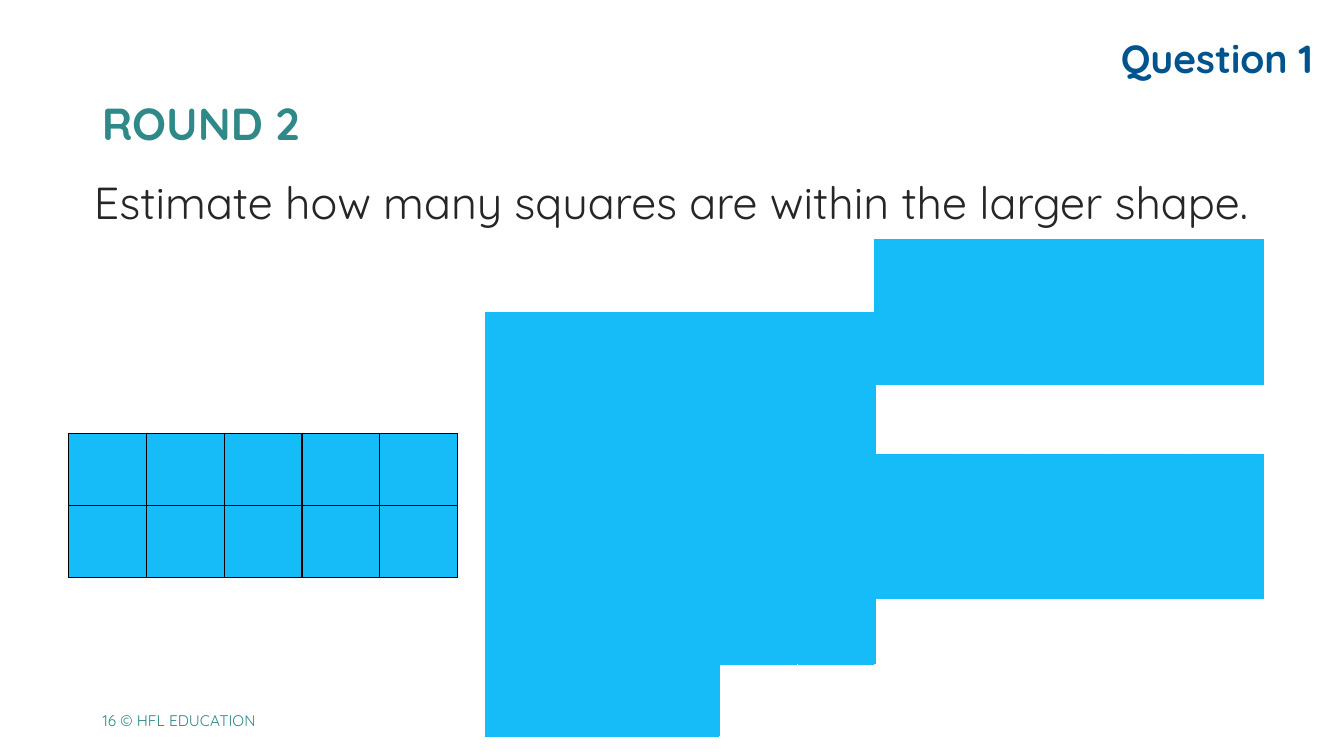
"""Build the Round 2 estimation slide with its ten-square blocks."""
from dataclasses import dataclass

from lxml import etree
from pptx import Presentation
from pptx import util as u
from pptx.dml.color import RGBColor
from pptx.enum import text
from pptx.oxml import ns

FONT = "Quicksand"
COLOURS = {
    "teal": "2F8989",
    "navy": "00548E",
    "ink": "262626",
    "sky": "15BCF8",
    "black": "000000",
    "white": "FFFFFF",
}
ROWS, COLUMNS = 2, 5
BLOCK_WIDTH, BLOCK_HEIGHT = 3.86, 1.43
ALL_SIDES = "LRTB"


@dataclass(frozen=True)
class Label:
    """Wording, place and look of one text."""

    wording: str
    left: float
    top: float
    width: float
    height: float
    size: int
    colour: str
    bold: bool = False
    align: text.PP_ALIGN = text.PP_ALIGN.LEFT
    anchor: text.MSO_ANCHOR = text.MSO_ANCHOR.MIDDLE
    wrap: bool = True


@dataclass(frozen=True)
class Block:
    """A block of ten squares, some of which may be blank."""

    left: float
    top: float
    line: str = "sky"
    blanks: tuple[tuple[int, int, str], ...] = ()


TITLE = Label("ROUND 2", 0.91, 0.59, 9.84, 1.26, 32, "teal", bold=True)
TASK = Label(
    "Estimate how many squares are within the larger shape.",
    0.52, 1.68, 12.28, 4.13, 32, "ink",
    align=text.PP_ALIGN.CENTER, anchor=text.MSO_ANCHOR.TOP,
)
FOOTER = Label("16 © HFL EDUCATION", 0.92, 6.95, 2.75, 0.4, 11, "teal")
QUESTION = Label(
    "Question 1", 10.93, 0.29, 2.19, 0.57, 28, "navy", bold=True,
    align=text.PP_ALIGN.RIGHT, anchor=text.MSO_ANCHOR.TOP, wrap=False,
)
BLOCKS = [
    Block(4.82, 4.51),
    Block(0.68, 4.3, "black"),
    Block(4.82, 3.1),
    Block(8.67, 2.38),
    Block(8.67, 4.51),
    Block(4.82, 5.88, blanks=((1, 3, "LT"), (1, 4, "T"))),
]


def rgb(name: str) -> RGBColor:
    """Return the named colour."""
    return RGBColor.from_string(COLOURS[name])


def fill_label(box, label: Label) -> None:
    """Place a text shape and format its single paragraph."""
    box.left, box.top = u.Inches(label.left), u.Inches(label.top)
    box.width, box.height = u.Inches(label.width), u.Inches(label.height)
    frame = box.text_frame
    frame.text = label.wording
    frame.auto_size = text.MSO_AUTO_SIZE.NONE
    frame.word_wrap = label.wrap
    frame.vertical_anchor = label.anchor
    para = frame.paragraphs[0]
    para.alignment = label.align
    para.space_before = u.Pt(0)
    span = para.runs[0]
    span.font.name = FONT
    span.font.size = u.Pt(label.size)
    span.font.bold = label.bold
    span.font.color.rgb = rgb(label.colour)


def remove_bullet(para) -> None:
    """Clear the bullet and indent of a body paragraph."""
    properties = para._p.get_or_add_pPr()
    properties.set("marL", "0")
    properties.set("indent", "0")
    etree.SubElement(properties, ns.qn("a:buNone"))


def add_borders(cell, sides: str, colour: str) -> None:
    """Draw one-point borders on the given sides of a cell."""
    properties = cell._tc.get_or_add_tcPr()
    for side in sides:
        line = etree.SubElement(properties, ns.qn(f"a:ln{side}"), w=str(u.Pt(1)))
        solid = etree.SubElement(line, ns.qn("a:solidFill"))
        etree.SubElement(solid, ns.qn("a:srgbClr"), val=COLOURS[colour])


def add_block(page, block: Block) -> None:
    """Add one block of squares as a table."""
    table = page.shapes.add_table(
        ROWS, COLUMNS, u.Inches(block.left), u.Inches(block.top),
        u.Inches(BLOCK_WIDTH), u.Inches(BLOCK_HEIGHT),
    ).table
    table.first_row = table.horz_banding = False
    blanks = {(row, column): sides for row, column, sides in block.blanks}
    for row in range(ROWS):
        for column in range(COLUMNS):
            cell = table.cell(row, column)
            add_borders(cell, blanks.get((row, column), ALL_SIDES), block.line)
            cell.fill.solid()
            cell.fill.fore_color.rgb = rgb("white" if (row, column) in blanks else "sky")


def main() -> None:
    """Build and save the deck."""
    deck = Presentation()
    deck.slide_width, deck.slide_height = u.Inches(13.33), u.Inches(7.5)
    page = deck.slides.add_slide(deck.slide_layouts[1])
    fill_label(page.shapes.title, TITLE)
    body = page.placeholders[1]
    fill_label(body, TASK)
    task = body.text_frame.paragraphs[0]
    task.space_after = u.Pt(12)
    remove_bullet(task)
    for label in (FOOTER, QUESTION):
        fill_label(page.shapes.add_textbox(0, 0, 0, 0), label)
    for block in BLOCKS:
        add_block(page, block)
    deck.save("out.pptx")


if __name__ == "__main__":
    main()
